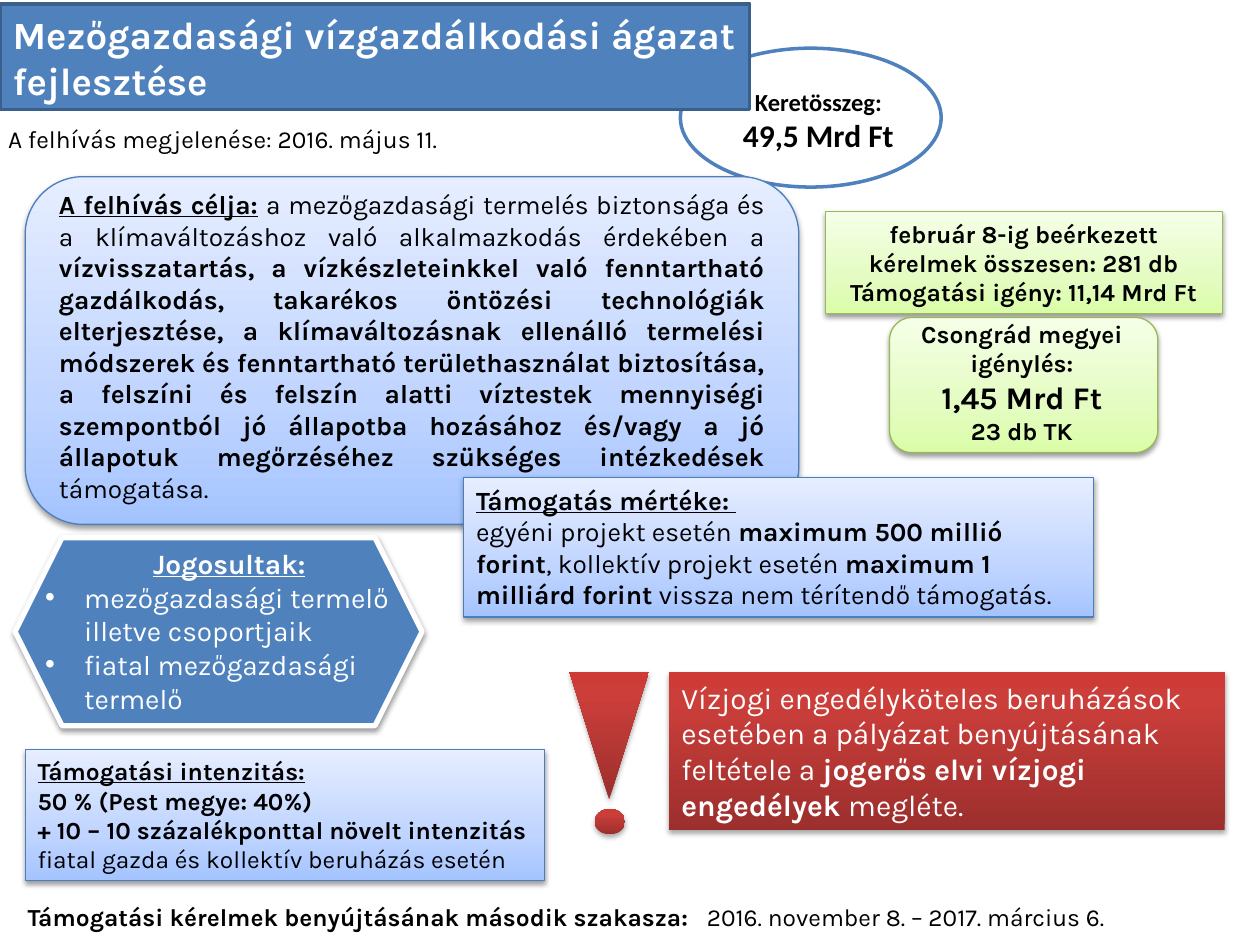
from lxml.etree import SubElement
from pptx import Presentation
from pptx.dml.color import RGBColor
from pptx.enum.shapes import MSO_SHAPE as Geometry
from pptx.enum.text import MSO_ANCHOR as Anchor, MSO_AUTO_SIZE as AutoSize, PP_ALIGN as Align
from pptx.oxml.ns import qn
from pptx.util import Inches, Pt

WIDTH, HEIGHT = Inches(10), Inches(7.5)
COLORS = {"black": "000000", "white": "FFFFFF", "blue": "4F81BD", "navy": "3A5F8C",
          "blue edge": "4B7EBC", "green edge": "98B955"}
GRADIENTS = {
    "pale blue": [(0, "A4C4FF"), (35, "BFD4FF"), (100, "E6EEFF")],
    "pale green": [(0, "DAFDA7"), (35, "E4FCC2"), (100, "F5FFE7")],
    "red": [(0, "9C2F2D"), (80, "CB3E3A"), (100, "CE3B37")],
}
SOFT, DEEP = (38, 1.6), (35, 1.8)
STYLES = {
    "title": ("blue", "navy", 2, None),
    "outline": ("white", "blue", 2, None),
    "hexagon": ("blue", "white", 3, SOFT),
    "blue card": ("pale blue", "blue edge", 0.75, SOFT),
    "green card": ("pale green", "green edge", 0.75, SOFT),
    "warning": ("red", None, 0, DEEP),
}

TITLE = [[("Mezőgazdasági vízgazdálkodási ágazat", "b")], [("fejlesztése", "b")]]
PUBLISHED = [[("A felhívás megjelenése: 2016. május 11.", "")]]
GOAL = [[
    ("A felhívás célja:", "bu"), (" ", "b"),
    ("a mezőgazdasági termelés biztonsága és a klímaváltozáshoz való alkalmazkodás érdekében a ", ""),
    ("vízvisszatartás, a vízkészleteinkkel való fenntartható gazdálkodás, takarékos öntözési "
     "technológiák elterjesztése, a klímaváltozásnak ellenálló termelési módszerek és fenntartható "
     "területhasználat biztosítása, a felszíni és felszín alatti víztestek mennyiségi szempontból "
     "jó állapotba hozásához és/vagy a jó állapotuk megőrzéséhez szükséges intézkedések ", "b"),
    ("támogatása.", "")]]
DEADLINE = [[("Támogatási kérelmek benyújtásának második szakasza:", "b")]]
DATES = [[("2016. november 8. – 2017. március 6.", "")]]
RATE = [
    [("Támogatás mértéke: ", "bu")],
    [("egyéni projekt esetén ", ""), ("maximum 500 millió forint", "b"),
     (", kollektív projekt esetén ", ""), ("maximum 1 milliárd forint", "b"),
     (" vissza nem térítendő támogatás.", "")]]
ELIGIBLE = [
    [("Jogosultak:", "bu")],
    [("mezőgazdasági termelő illetve csoportjaik", "")],
    [("fiatal mezőgazdasági termelő", "")]]
WARNING = [[
    ("Vízjogi engedélyköteles beruházások esetében a pályázat benyújtásának feltétele a ", ""),
    ("jogerős elvi vízjogi engedélyek ", "b"), ("megléte.", "")]]
INTENSITY = [
    [("Támogatási intenzitás:", "bu")],
    [("50 % (Pest megye: 40%)", "b")],
    [("+ 10 – 10 százalékponttal növelt intenzitás ", "b"),
     ("fiatal gazda és kollektív beruházás esetén", "")]]
RECEIVED = [
    [("február 8-ig beérkezett kérelmek összesen: 281 db", "b")],
    [("Támogatási igény: 11,14 Mrd Ft", "b")]]
BUDGET = [[("Keretösszeg:", "b")], [("49,5 Mrd Ft", "b")]]
COUNTY = [
    [("Csongrád megyei igénylés:", "b")], [("1,45 Mrd Ft", "b")], [("23 db TK", "b")]]

CENTER = {"align": Align.CENTER}
MIDDLE = {"anchor": Anchor.MIDDLE}
ITEMS = [
    (Geometry.OVAL, "outline", (54, 5.1, 20.7, 14.7), None, {}),
    (Geometry.HEXAGON, "hexagon", (1.2, 56.9, 32.3, 19.9), None, {}),
    (Geometry.ROUNDED_RECTANGLE, "blue card", (2, 18.7, 61.4, 36.8), None, {}),
    ("title", "title", (0, 0.4, 59.5, 11.2), TITLE, {"sizes": [22], "color": "white", **MIDDLE}),
    (None, None, (-3.7, 10.9, 42.8, 6), PUBLISHED, {"spacing": 1.5, **CENTER}),
    (None, None, (3.7, 19.3, 58, 35.1), GOAL, {"sizes": [15], "align": Align.JUSTIFY}),
    (None, None, (1.2, 94.8, 57.9, 4.5), DEADLINE, {}),
    (None, None, (54.4, 94.8, 35, 4.5), DATES, {"wrap": False, **CENTER}),
    (Geometry.RECTANGLE, "blue card", (36.8, 50.5, 50, 14.8), RATE, {"sizes": [15], **MIDDLE}),
    (None, None, (2.6, 57.2, 31.2, 19.3), ELIGIBLE,
     {"sizes": [16], "color": "white", "bullets_from": 1, **CENTER}),
    (Geometry.RECTANGLE, "warning", (53.1, 71.1, 44.1, 16.7), WARNING,
     {"sizes": [17], "color": "white", **MIDDLE}),
    (Geometry.FLOWCHART_MERGE, "warning", (45.2, 71.1, 6.3, 13.5), None, {}),
    (Geometry.FLOWCHART_CONNECTOR, "warning", (47.2, 85.6, 2.4, 2.7), None, {}),
    (Geometry.RECTANGLE, "blue card", (2, 79.3, 41.2, 13.9), INTENSITY, MIDDLE),
    (Geometry.RECTANGLE, "green card", (65.5, 22.4, 31.5, 10.8), RECEIVED, {**CENTER, **MIDDLE}),
    (None, None, (57.9, 8.5, 14.1, 8.5), BUDGET,
     {"sizes": [14, 18], "font": "Calibri", "wrap": False, **CENTER}),
    (Geometry.ROUNDED_RECTANGLE, "green card", (70.6, 33.6, 21.3, 14.3), None, {}),
    (None, None, (71.2, 33.1, 19.8, 14.8), COUNTY, {"sizes": [14, 18, 14], **CENTER}),
]


def rgb(name):
    return RGBColor.from_string(COLORS[name])


def add_color(parent, value, alpha=None):
    color = SubElement(parent, qn("a:srgbClr"), val=value)
    if alpha:
        SubElement(color, qn("a:alpha"), val=str(alpha * 1000))


def set_gradient(shape, stops):
    shape.fill.background()
    properties = shape.element.spPr
    gradient = SubElement(properties, qn("a:gradFill"), rotWithShape="1")
    properties.replace(properties.find(qn("a:noFill")), gradient)
    stop_list = SubElement(gradient, qn("a:gsLst"))
    for position, value in stops:
        add_color(SubElement(stop_list, qn("a:gs"), pos=str(position * 1000)), value)
    SubElement(gradient, qn("a:lin"), ang=str(270 * 60000), scaled="0")


def apply_style(shape, fill, line, width, shadow):
    if fill in GRADIENTS:
        set_gradient(shape, GRADIENTS[fill])
    else:
        shape.fill.solid()
        shape.fill.fore_color.rgb = rgb(fill)
    if line:
        shape.line.color.rgb = rgb(line)
        shape.line.width = Pt(width)
    else:
        shape.line.fill.background()
    shape.shadow.inherit = False
    if shadow:
        alpha, distance = shadow
        effects = shape.element.spPr.find(qn("a:effectLst"))
        outer = SubElement(effects, qn("a:outerShdw"), blurRad=str(Pt(3.1)),
                           dist=str(Pt(distance)), dir=str(90 * 60000), rotWithShape="0")
        add_color(outer, COLORS["black"], alpha)


def add_bullet(paragraph):
    properties = paragraph._p.get_or_add_pPr()
    indent = Inches(0.31)
    properties.set("marL", str(indent))
    properties.set("indent", str(-indent))
    SubElement(properties, qn("a:buFont"), typeface="Arial")
    SubElement(properties, qn("a:buChar"), char="•")


def write_text(shape, paragraphs, sizes=(14,), font="Karla", color="black", align=Align.LEFT,
               anchor=Anchor.TOP, wrap=True, spacing=1.0, bullets_from=None):
    frame = shape.text_frame
    frame.word_wrap = wrap
    frame.auto_size = AutoSize.SHAPE_TO_FIT_TEXT
    frame.vertical_anchor = anchor
    for index, runs in enumerate(paragraphs):
        paragraph = frame.add_paragraph() if index else frame.paragraphs[0]
        bulleted = bullets_from is not None and index >= bullets_from
        paragraph.alignment = Align.LEFT if bulleted else align
        paragraph.line_spacing = spacing
        if bulleted:
            add_bullet(paragraph)
        for text, marks in runs:
            run = paragraph.add_run()
            run.text = text
            run.font.name = font
            run.font.size = Pt(sizes[index % len(sizes)])
            run.font.bold = "b" in marks
            run.font.underline = "u" in marks
            run.font.color.rgb = rgb(color)


def place_item(slide, geometry, style, box, paragraphs, text_format):
    left, top, width, height = (
        int(share * side / 100) for share, side in zip(box, (WIDTH, HEIGHT) * 2))
    if geometry == "title":
        shape = slide.shapes.title
        shape.element.getparent().append(shape.element)
        shape.left, shape.top, shape.width, shape.height = left, top, width, height
    elif geometry is None:
        shape = slide.shapes.add_textbox(left, top, width, height)
    else:
        shape = slide.shapes.add_shape(geometry, left, top, width, height)
    if style:
        apply_style(shape, *STYLES[style])
    if paragraphs:
        write_text(shape, paragraphs, **text_format)


def main():
    presentation = Presentation()
    presentation.slide_width, presentation.slide_height = WIDTH, HEIGHT
    slide = presentation.slides.add_slide(presentation.slide_layouts[5])
    for item in ITEMS:
        place_item(slide, *item)
    presentation.save("out.pptx")


if __name__ == "__main__":
    main()
